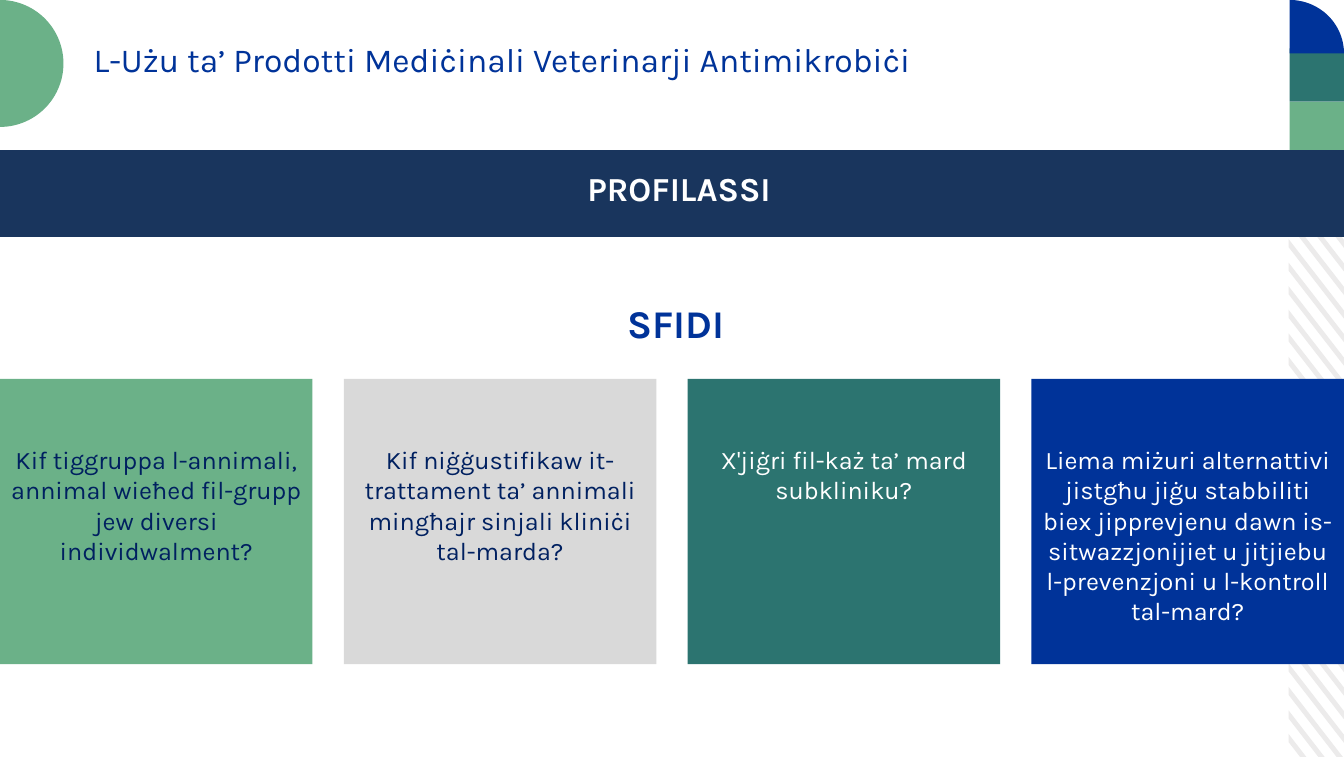
from math import cos, radians, sin

from pptx import Presentation
from pptx.dml.color import RGBColor
from pptx.enum.shapes import MSO_SHAPE as Shape
from pptx.enum.text import MSO_ANCHOR as Anchor, PP_ALIGN as Align
from pptx.util import Inches, Pt

FONT = "Karla"
COLORS = {
    "blue": "003399", "navy": "19355D", "ink": "002060", "teal": "2C7470",
    "green": "6BB188", "grey": "D9D9D9", "stripe": "ECEBEB", "white": "FFFFFF",
}
WIDTH, HEIGHT = 13.33, 7.51

# Content: text, left, top, width, height, size, bold, colour, alignment
HEADINGS = [
    ("PROFILASSI", 0.48, 1.62, 12.51, 0.5, 24, True, "white", Align.CENTER),
    ("SFIDI", 3.37, 2.92, 6.67, 0.57, 28, True, "blue", Align.CENTER),
    ("L-Użu ta’ Prodotti Mediċinali Veterinarji Antimikrobiċi",
     0.83, 0.34, 8.76, 0.58, 24, False, "blue", Align.LEFT),
]
# Content: text, fill, text colour
CHALLENGES = [
    ("Kif tiggruppa l-annimali, annimal wieħed fil-grupp jew diversi individwalment?",
     "green", "ink"),
    ("Kif niġġustifikaw it-trattament ta’ annimali mingħajr sinjali kliniċi tal-marda?",
     "grey", "ink"),
    ("X'jiġri fil-każ ta’ mard subkliniku?", "teal", "white"),
    ("Liema miżuri alternattivi jistgħu jiġu stabbiliti biex jipprevjenu dawn "
     "is-sitwazzjonijiet u jitjiebu l-prevenzjoni u l-kontroll tal-mard?",
     "blue", "white"),
]

deck = Presentation()
deck.slide_width, deck.slide_height = Inches(WIDTH), Inches(HEIGHT)
page = deck.slides.add_slide(deck.slide_layouts[6])


def paint(shape, color):
    shape.shadow.inherit = False
    shape.fill.solid()
    shape.fill.fore_color.rgb = RGBColor.from_string(COLORS[color])
    shape.line.fill.background()


def add_block(left, top, width, height, color):
    block = page.shapes.add_shape(
        Shape.RECTANGLE, Inches(left), Inches(top), Inches(width), Inches(height))
    paint(block, color)
    return block


def add_outline(contours, color):
    contours = [[(Inches(x), Inches(y)) for x, y in points] for points in contours]
    builder = page.shapes.build_freeform(*contours[0][0])
    for index, points in enumerate(contours):
        if index:
            builder.move_to(*points[0])
        builder.add_line_segments(points[1:], close=True)
    paint(builder.convert_to_shape(), color)


def add_sector(x, y, radius_x, radius_y, end_angle, color):
    arc = [(x + radius_x * cos(radians(a)), y + radius_y * sin(radians(a)))
           for a in range(-90, end_angle + 1, 3)]
    add_outline([[(x, y)] + arc], color)


def write(box, text, size, color, align, bold=False):
    frame = box.text_frame
    frame.word_wrap = True
    frame.vertical_anchor = Anchor.TOP
    para = frame.paragraphs[0]
    para.alignment = align
    span = para.add_run()
    span.text = text
    span.font.name, span.font.size, span.font.bold = FONT, Pt(size), bold
    span.font.color.rgb = RGBColor.from_string(COLORS[color])


# Diagonal stripes on the right edge, cut off at the foot of the page
STRIPE_LEFT, STRIPE_TOP, STRIPE_PITCH = 12.78, 1.67, 0.2338
STRIPE_RUN, STRIPE_DROP, STRIPE_DEPTH = 0.55, 0.71, 0.08


def edge_end(start):
    share = min(1, (HEIGHT - start) / STRIPE_DROP)
    return STRIPE_LEFT + share * STRIPE_RUN, start + share * STRIPE_DROP


stripes = []
for index in range(25):
    upper = STRIPE_TOP + index * STRIPE_PITCH
    lower = upper + STRIPE_DEPTH
    stripes.append([(STRIPE_LEFT, upper), edge_end(upper),
                    edge_end(lower), (STRIPE_LEFT, lower)])
add_outline(stripes, "stripe")

# Corner ornaments
CORNER_LEFT, CORNER_WIDTH, CORNER_HEIGHT = 12.79, 0.54, 0.53
for top, color in [(0.48, "teal"), (1.01, "green")]:
    add_block(CORNER_LEFT, top, CORNER_WIDTH, CORNER_HEIGHT, color)
add_sector(CORNER_LEFT, CORNER_HEIGHT, CORNER_WIDTH, CORNER_HEIGHT, 0, "blue")
add_sector(0, 0.63, 0.63, 0.63, 90, "green")

# Band behind the section name
add_block(0, 1.49, WIDTH, 0.86, "navy")

# Challenge cards, spread evenly over the full width
CARD_TOP, CARD_WIDTH, CARD_HEIGHT = 3.76, 3.1, 2.83
card_step = (WIDTH - CARD_WIDTH) / (len(CHALLENGES) - 1)
for index, (text, fill, ink) in enumerate(CHALLENGES):
    card = add_block(index * card_step, CARD_TOP, CARD_WIDTH, CARD_HEIGHT, fill)
    card.text_frame.margin_top = Inches(0.65)
    write(card, text, 18, ink, Align.CENTER)

# Headings
for text, left, top, width, height, size, bold, color, align in HEADINGS:
    box = page.shapes.add_textbox(
        Inches(left), Inches(top), Inches(width), Inches(height))
    write(box, text, size, color, align, bold)

deck.save("out.pptx")
